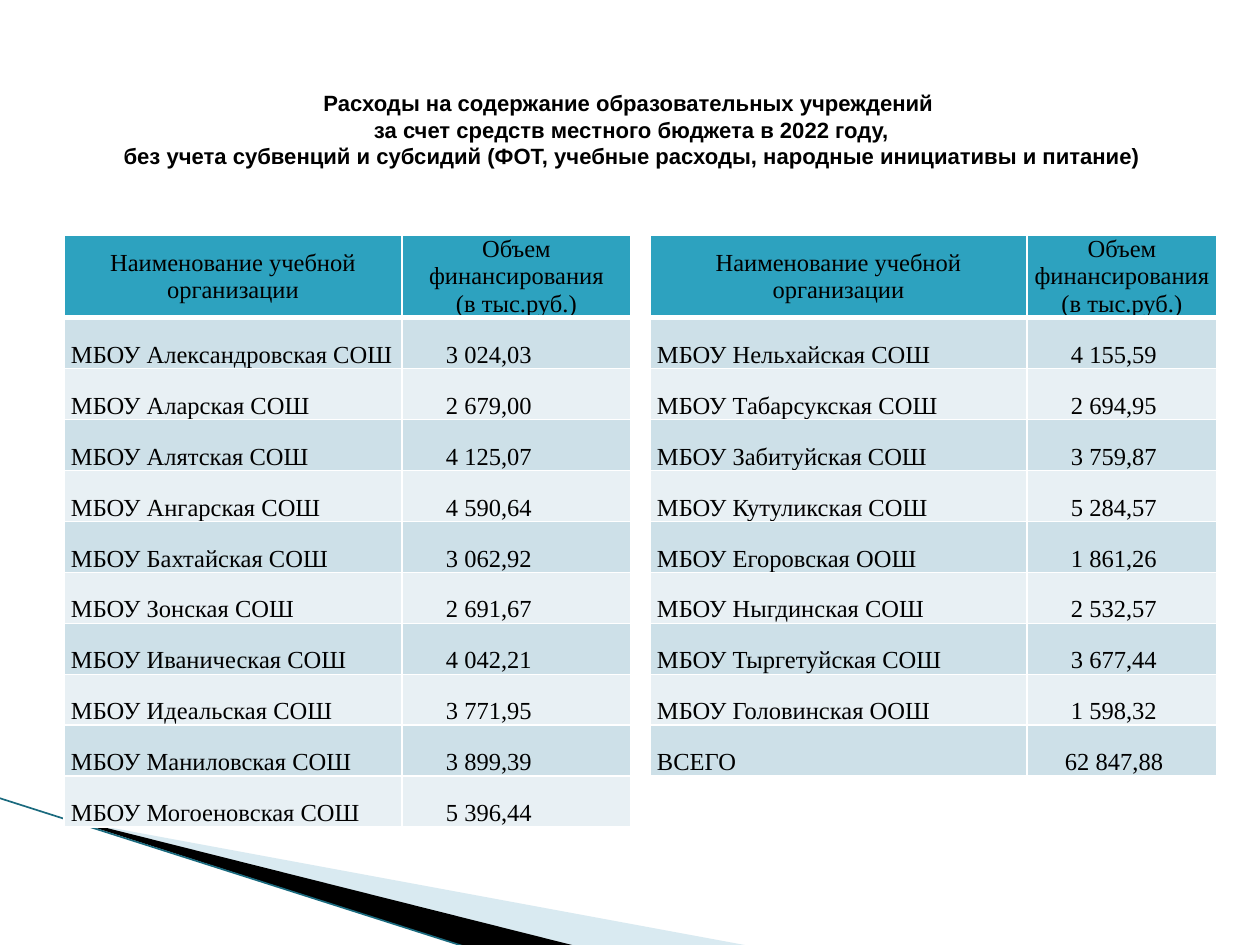
"""Build the slide of school upkeep spending in 2022."""
from dataclasses import dataclass

from lxml import etree
from pptx import Presentation
from pptx import util as u
from pptx.dml.color import RGBColor
from pptx.enum import shapes, text
from pptx.oxml.ns import qn

EMU_PER_PX = 914400 / 126
HEADER_HEIGHT, ROW_HEIGHT = 82, 51
NAME_INDENT, AMOUNT_INDENT, TOTAL_INDENT = 7, 44, 38
COLORS = {
    "black": "000000",
    "white": "FFFFFF",
    "header": "2DA2BF",
    "odd": "CDE0E8",
    "even": "E8F0F4",
    "wedge": "A0CBDC",
    "edge": "1A6A7E",
}


@dataclass
class SpendingTable:
    left: int
    top: int
    widths: tuple[int, int]
    amount_heading: str
    schools: list[tuple[str, str]]
    total: str = ""


@dataclass
class Wedge:
    points: list[tuple[int, int]]
    color: str
    opacity: int = 100


TITLE = (
    "Расходы на содержание образовательных учреждений \v"
    "за счет средств местного бюджета в 2022 году,\v"
    "без учета субвенций и субсидий (ФОТ, учебные расходы, народные инициативы и питание)"
)
NAME_HEADING = "Наименование учебной организации"
WEDGES = [
    Wedge([(69, 820), (750, 946), (575, 946), (69, 819)], "wedge", 40),
    Wedge([(67, 818), (576, 946), (469, 948), (68, 819)], "black"),
]
TABLES = [
    SpendingTable(64, 235, (338, 229), "Объем финансирования\n(в тыс.руб.)", [
        ("МБОУ Александровская СОШ", "3 024,03"),
        ("МБОУ Аларская СОШ", "2 679,00"),
        ("МБОУ Алятская СОШ", "4 125,07"),
        ("МБОУ Ангарская СОШ", "4 590,64"),
        ("МБОУ Бахтайская СОШ", "3 062,92"),
        ("МБОУ Зонская СОШ", "2 691,67"),
        ("МБОУ Иваническая СОШ", "4 042,21"),
        ("МБОУ Идеальская СОШ", "3 771,95"),
        ("МБОУ Маниловская СОШ", "3 899,39"),
        ("МБОУ Могоеновская СОШ", "5 396,44"),
    ]),
    SpendingTable(650, 235, (377, 190), "Объем финансирования (в тыс.руб.)", [
        ("МБОУ Нельхайская СОШ", "4 155,59"),
        ("МБОУ Табарсукская СОШ", "2 694,95"),
        ("МБОУ Забитуйская СОШ", "3 759,87"),
        ("МБОУ Кутуликская СОШ", "5 284,57"),
        ("МБОУ Егоровская ООШ", "1 861,26"),
        ("МБОУ Ныгдинская СОШ", "2 532,57"),
        ("МБОУ Тыргетуйская СОШ", "3 677,44"),
        ("МБОУ Головинская ООШ", "1 598,32"),
    ], "62 847,88"),
]


def px(length: int) -> u.Emu:
    return u.Emu(round(length * EMU_PER_PX))


def rgb(name: str) -> RGBColor:
    return RGBColor.from_string(COLORS[name])


def style_paragraphs(frame, font_name: str, size: float, bold: bool, align) -> None:
    for paragraph in frame.paragraphs:
        paragraph.alignment = align
        font = paragraph.font
        font.name, font.size, font.bold = font_name, u.Pt(size), bold
        font.color.rgb = rgb("black")


def add_borders(cell, bottom: int) -> None:
    properties = cell._tc.get_or_add_tcPr()
    sides = {"a:lnL": 1, "a:lnR": 1, "a:lnT": 1, "a:lnB": bottom}
    for position, (tag, points) in enumerate(sides.items()):
        border = etree.Element(qn(tag), w=str(u.Pt(points)))
        fill = etree.SubElement(border, qn("a:solidFill"))
        etree.SubElement(fill, qn("a:srgbClr"), val=COLORS["white"])
        properties.insert(position, border)


def fill_cell(cell, wording: str, color: str, indent: int, is_header: bool) -> None:
    cell.text = wording
    cell.fill.solid()
    cell.fill.fore_color.rgb = rgb(color)
    cell.margin_left, cell.margin_right = px(indent), px(1)
    cell.margin_top, cell.margin_bottom = px(1), 0
    cell.vertical_anchor = text.MSO_ANCHOR.MIDDLE if is_header else text.MSO_ANCHOR.BOTTOM
    align = text.PP_ALIGN.CENTER if is_header else text.PP_ALIGN.LEFT
    style_paragraphs(cell.text_frame, "Times New Roman", 14, False, align)
    add_borders(cell, 3 if is_header else 1)


def add_spending_table(slide, spending: SpendingTable) -> None:
    lines = [(NAME_HEADING, spending.amount_heading), *spending.schools]
    if spending.total:
        lines.append(("ВСЕГО", spending.total))
    height = HEADER_HEIGHT + ROW_HEIGHT * (len(lines) - 1)
    grid = slide.shapes.add_table(
        len(lines), 2, px(spending.left), px(spending.top), px(sum(spending.widths)), px(height)
    ).table
    for column, width in zip(grid.columns, spending.widths):
        column.width = px(width)
    for number, line in enumerate(lines):
        is_header = number == 0
        grid.rows[number].height = px(HEADER_HEIGHT if is_header else ROW_HEIGHT)
        color = "header" if is_header else "odd" if number % 2 else "even"
        amount_indent = TOTAL_INDENT if line[1] == spending.total else AMOUNT_INDENT
        indents = (1, 1) if is_header else (NAME_INDENT, amount_indent)
        for column, (wording, indent) in enumerate(zip(line, indents)):
            fill_cell(grid.cell(number, column), wording, color, indent, is_header)


def add_wedge(slide, wedge: Wedge) -> None:
    outline = slide.shapes.build_freeform(*wedge.points[0], scale=EMU_PER_PX)
    outline.add_line_segments(wedge.points[1:], close=True)
    body = outline.convert_to_shape()
    body.shadow.inherit = False
    body.line.fill.background()
    body.fill.solid()
    body.fill.fore_color.rgb = rgb(wedge.color)
    if wedge.opacity < 100:
        tint = body._element.spPr.find(qn("a:solidFill"))[0]
        etree.SubElement(tint, qn("a:alpha"), val=str(wedge.opacity * 1000))


def add_edge(slide) -> None:
    edge = slide.shapes.add_connector(
        shapes.MSO_CONNECTOR.STRAIGHT, px(-1), px(798), px(469), px(948)
    )
    edge.line.color.rgb = rgb("edge")
    edge.line.width = u.Pt(0.95)
    etree.SubElement(edge._element.spPr, qn("a:effectLst"))


def set_title(slide) -> None:
    heading = slide.shapes.title
    heading.left, heading.top, heading.width, heading.height = map(px, (64, 76, 1134, 107))
    frame = heading.text_frame
    frame.text = TITLE
    frame.word_wrap = True
    frame.auto_size = text.MSO_AUTO_SIZE.NONE
    frame.vertical_anchor = text.MSO_ANCHOR.MIDDLE
    style_paragraphs(frame, "Arial", 12.6, True, text.PP_ALIGN.CENTER)


def main() -> None:
    deck = Presentation()
    deck.slide_width, deck.slide_height = px(1260), px(945)
    slide = deck.slides.add_slide(deck.slide_layouts[5])
    set_title(slide)
    for wedge in WEDGES:
        add_wedge(slide, wedge)
    add_edge(slide)
    for spending in TABLES:
        add_spending_table(slide, spending)
    deck.save("out.pptx")


if __name__ == "__main__":
    main()
